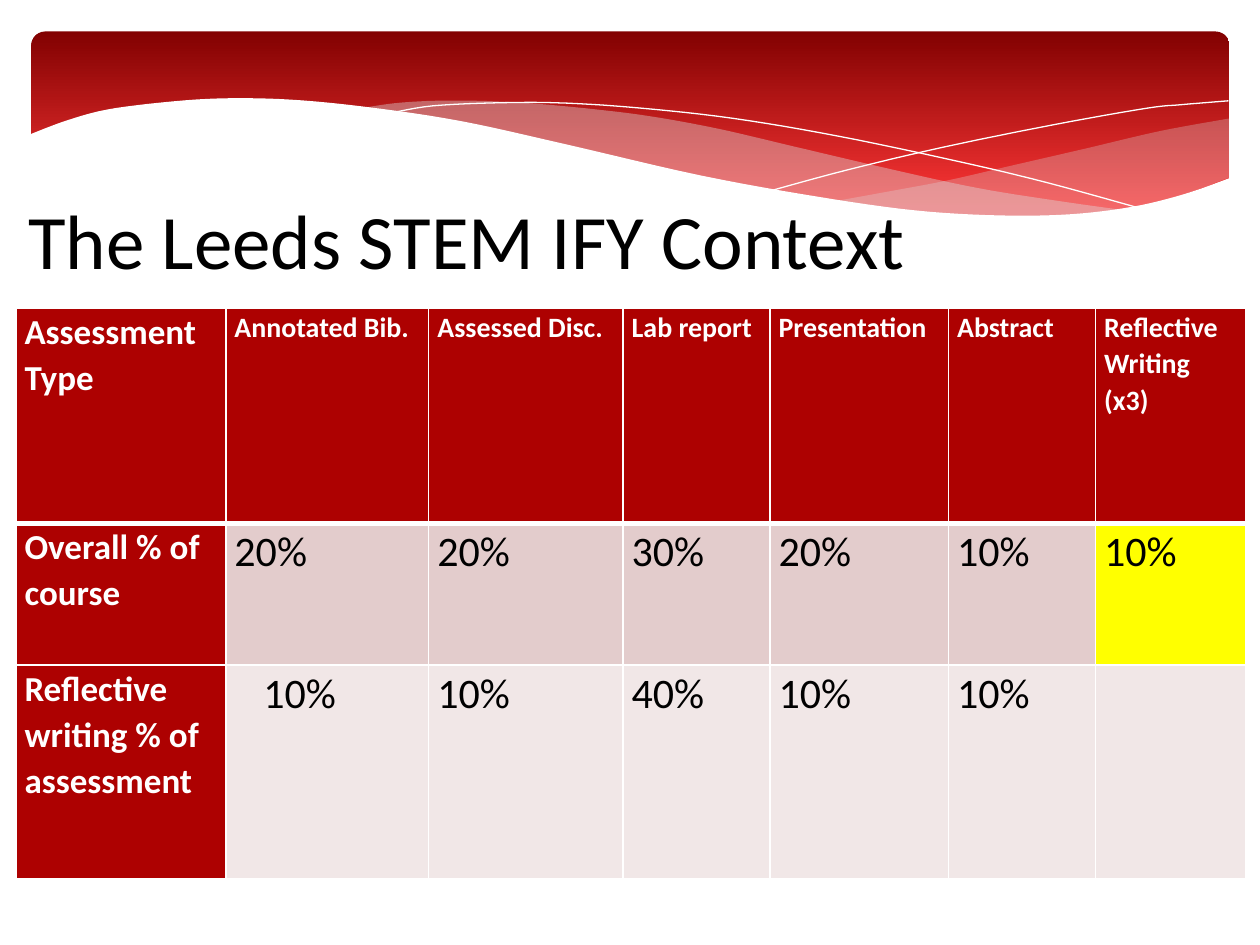
"""Build the STEM IFY assessment slide with a wave banner and a weighting table."""
from lxml.etree import SubElement
from pptx import Presentation
from pptx.dml.color import RGBColor
from pptx.enum.shapes import MSO_SHAPE
from pptx.enum.text import MSO_ANCHOR, PP_ALIGN
from pptx.oxml.ns import qn
from pptx.util import Pt

FONT = "Calibri"
WHITE = RGBColor(0xFF, 0xFF, 0xFF)
BLACK = RGBColor(0x00, 0x00, 0x00)
DARK_RED = RGBColor(0x82, 0x01, 0x01)
BRIGHT_RED = RGBColor(0xFE, 0x37, 0x37)
TABLE_RED = RGBColor(0xAD, 0x01, 0x01)
ROSE = RGBColor(0xE3, 0xCC, 0xCC)
PALE_ROSE = RGBColor(0xF1, 0xE7, 0xE7)
YELLOW = RGBColor(0xFF, 0xFF, 0x00)
MIST = RGBColor(0xDE, 0xDE, 0xE0)

TITLE = "The Leeds STEM IFY Context"
ROWS = [
    ["Assessment Type", "Annotated Bib.", "Assessed Disc.", "Lab report",
     "Presentation", "Abstract", "Reflective Writing (x3)"],
    ["Overall % of course", "20%", "20%", "30%", "20%", "10%", "10%"],
    ["Reflective writing % of assessment", "10%", "10%", "40%", "10%", "10%", ""],
]
COLUMN_WIDTHS = [120, 116, 111, 84, 102, 84, 86]
ROW_HEIGHTS = [123, 81, 122]
ROW_FILLS = [TABLE_RED, ROSE, PALE_ROSE]
HIGHLIGHTED_CELL = (1, 6)
INDENTED_CELL = (2, 1)
CELL_MARGIN, CELL_INDENT = 5, 16.5

RIGHT_WAVE = [
    [(702.5, 67.7), (663, 74.9), (620, 85), (579.6, 94.3), (542, 103),
     (508, 109.4), (476, 115.2)],
    [(476, 115.2), (507.6, 118.8), (545, 122.4), (578, 123.8), (615, 122.4),
     (646, 118.8), (673, 112.3), (702.5, 101.5)],
]
MIDDLE_WAVE = [
    [(643, 120.2), (602.6, 114.5), (558, 107.3), (508.3, 96.5), (452.9, 83.5),
     (409.7, 73.4), (370, 66.2), (334.8, 61.9), (302.4, 59), (273.6, 57.6),
     (247.7, 57.6), (225.4, 59), (206, 61.9)],
    [(206, 61.9), (246.2, 67.7), (290.9, 76.3), (323.3, 83.5), (381.6, 97.2),
     (432.7, 108), (478.8, 115.9), (519.8, 121), (556.6, 123.8), (589, 124.6),
     (617, 123.1), (643, 120.2)],
]
FALLING_LINE = [
    [(222.5, 64.8), (247.7, 60.5), (288.7, 58.7), (324, 59), (367, 61.9),
     (419, 67.7), (478.8, 77.8), (547.2, 92.2), (598.3, 104.4), (653, 119.5)],
]
RISING_LINE = [
    [(441.4, 108.7), (483.8, 97.2), (538.6, 84.2), (602, 71.3), (655, 61.9),
     (675.4, 59.8), (702, 57.6)],
]
WHITE_WAVE = [
    [(703.4, 101.5), (676.8, 110.9), (647.3, 118.1), (612, 122.4), (571, 123.1),
     (522.7, 120.2), (466.6, 112.3), (399.6, 100.1), (321.8, 82.1), (262.8, 69.1),
     (210.2, 61.2), (165.6, 56.9), (127.4, 56.2), (95, 58.3), (61.2, 62.6),
     (37.4, 69.1), (16.6, 77)],
    [(16.6, 161), (703.4, 161)],
]


def smooth(knots, steps=6):
    """Return points on a Catmull-Rom curve through the knots."""
    padded = [knots[0], *knots, knots[-1]]
    points = [knots[0]]
    for a, b, c, d in zip(padded, padded[1:], padded[2:], padded[3:]):
        for step in range(1, steps + 1):
            t = step / steps
            points.append(tuple(
                (2 * q + (r - p) * t + (2 * p - 5 * q + 4 * r - s) * t ** 2
                 + (3 * q - p - 3 * r + s) * t ** 3) / 2
                for p, q, r, s in zip(a, b, c, d)))
    return points


def add_curve(slide, curves, color, opacity=None, closed=True):
    """Add a filled wave, or a hairline when it is not closed."""
    points = [(Pt(x), Pt(y)) for curve in curves for x, y in smooth(curve)]
    builder = slide.shapes.build_freeform(*points[0], scale=1.0)
    builder.add_line_segments(points[1:], close=closed)
    shape = builder.convert_to_shape()
    shape.shadow.inherit = False
    if not closed:
        shape.fill.background()
        shape.line.color.rgb = color
        shape.line.width = Pt(0)
        return
    shape.fill.solid()
    shape.fill.fore_color.rgb = color
    shape.line.fill.background()
    if opacity:
        color_element = shape._element.spPr.find(qn("a:solidFill"))[0]
        SubElement(color_element, qn("a:alpha"), val=str(opacity * 1000))


def add_banner(slide):
    """Add the red gradient panel and its waves."""
    panel = slide.shapes.add_shape(
        MSO_SHAPE.ROUNDED_RECTANGLE, Pt(18), Pt(18), Pt(684.5), Pt(112.3))
    panel.adjustments[0] = 0.07
    panel.shadow.inherit = False
    panel.line.fill.background()
    panel.fill.gradient()
    panel.fill.gradient_angle = 270
    stops = panel.fill.gradient_stops
    for stop, color, position in zip(stops, (DARK_RED, BRIGHT_RED), (0, 0.9)):
        stop.color.rgb = color
        stop.position = position
    add_curve(slide, RIGHT_WAVE, MIST, opacity=29)
    add_curve(slide, MIDDLE_WAVE, MIST, opacity=40)
    add_curve(slide, FALLING_LINE, WHITE, closed=False)
    add_curve(slide, RISING_LINE, WHITE, closed=False)
    add_curve(slide, WHITE_WAVE, WHITE)


def format_runs(paragraph, size, color, bold):
    """Apply one font setting to every run."""
    for run in paragraph.runs:
        run.font.name = FONT
        run.font.size = Pt(size)
        run.font.bold = bold
        run.font.color.rgb = color


def place_title(slide):
    """Move and format the title placeholder above the banner."""
    title = slide.shapes.title
    slide.shapes._spTree.append(title._element)
    title.left, title.top, title.width, title.height = Pt(9), Pt(106), Pt(531), Pt(60.5)
    title.text_frame.text = TITLE
    title.text_frame.word_wrap = True
    title.text_frame.vertical_anchor = MSO_ANCHOR.MIDDLE
    paragraph = title.text_frame.paragraphs[0]
    paragraph.alignment = PP_ALIGN.LEFT
    format_runs(paragraph, 44, BLACK, False)


def set_borders(cell, row):
    """Draw white cell borders, thick below the header."""
    widths = {"L": 1, "R": 1, "T": 3 if row == 1 else 1, "B": 3 if row == 0 else 1}
    properties = cell._tc.get_or_add_tcPr()
    for side, width in widths.items():
        line = SubElement(properties, qn(f"a:ln{side}"), w=str(Pt(width)))
        SubElement(SubElement(line, qn("a:solidFill")), qn("a:srgbClr"), val=str(WHITE))


def fill_cell(cell, row, column, text):
    """Write and format one table cell."""
    heading = row == 0 or column == 0
    set_borders(cell, row)
    cell.fill.solid()
    cell.fill.fore_color.rgb = (
        YELLOW if (row, column) == HIGHLIGHTED_CELL
        else TABLE_RED if heading else ROW_FILLS[row])
    indent = CELL_INDENT if (row, column) == INDENTED_CELL else 0
    cell.margin_left, cell.margin_right = Pt(CELL_MARGIN + indent), Pt(CELL_MARGIN)
    cell.margin_top = cell.margin_bottom = Pt(0)
    cell.text_frame.text = text
    paragraph = cell.text_frame.paragraphs[0]
    paragraph.line_spacing = 1.07
    size = 20 if column == 0 else 16 if row == 0 else 24
    format_runs(paragraph, size, WHITE if heading else BLACK, heading)


def add_assessment_table(slide):
    """Add the table of assessment weights."""
    table = slide.shapes.add_table(
        len(ROWS), len(COLUMN_WIDTHS), Pt(9), Pt(176),
        Pt(sum(COLUMN_WIDTHS)), Pt(sum(ROW_HEIGHTS))).table
    for column, width in zip(table.columns, COLUMN_WIDTHS):
        column.width = Pt(width)
    for row, height in zip(table.rows, ROW_HEIGHTS):
        row.height = Pt(height)
    for row, texts in enumerate(ROWS):
        for column, text in enumerate(texts):
            fill_cell(table.cell(row, column), row, column, text)


def main():
    """Build and save the presentation."""
    presentation = Presentation()
    presentation.slide_width, presentation.slide_height = Pt(720), Pt(540)
    slide = presentation.slides.add_slide(presentation.slide_layouts[5])
    add_banner(slide)
    place_title(slide)
    add_assessment_table(slide)
    presentation.save("out.pptx")


if __name__ == "__main__":
    main()
